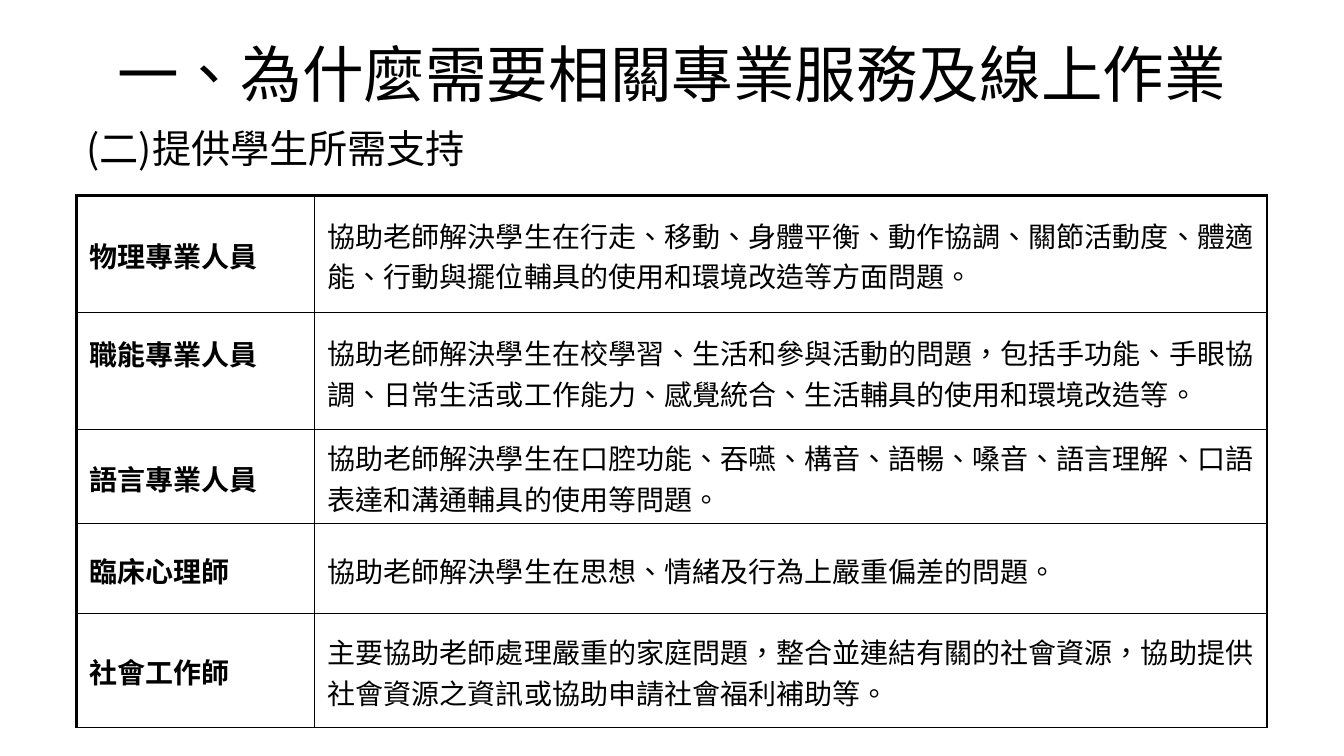
"""Build a slide on the support that related professionals give to students."""
from lxml.etree import SubElement
from pptx import Presentation
from pptx.dml.color import RGBColor
from pptx.enum.lang import MSO_LANGUAGE_ID
from pptx.enum.text import MSO_ANCHOR, MSO_AUTO_SIZE, PP_ALIGN
from pptx.oxml.ns import qn
from pptx.util import Cm, Pt

TITLE = "一、為什麼需要相關專業服務及線上作業"
SUBTITLE = "(二)提供學生所需支持"
SERVICES = [
    ("物理專業人員", "協助老師解決學生在行走、移動、身體平衡、動作協調、關節活動度、體適能、行動與擺位輔具的使用和環境改造等方面問題。"),
    ("職能專業人員", "協助老師解決學生在校學習、生活和參與活動的問題，包括手功能、手眼協調、日常生活或工作能力、感覺統合、生活輔具的使用和環境改造等。"),
    ("語言專業人員", "協助老師解決學生在口腔功能、吞嚥、構音、語暢、嗓音、語言理解、口語表達和溝通輔具的使用等問題。"),
    ("臨床心理師", "協助老師解決學生在思想、情緒及行為上嚴重偏差的問題。"),
    ("社會工作師", "主要協助老師處理嚴重的家庭問題，整合並連結有關的社會資源，協助提供社會資源之資訊或協助申請社會福利補助等。"),
]
COLUMN_WIDTHS = [6, 24]
ROW_HEIGHTS = [2.95, 2.95, 2.37, 2.26, 2.87]
RAISED_LABEL = "職能專業人員"
FONT = "Noto Sans CJK SC"
INK = "000000"
THIN, THICK = 1, 2.25


def color(value):
    return RGBColor.from_string(value)


def write(frame, text, size, bold=False, align=PP_ALIGN.LEFT):
    frame.word_wrap = True
    para = frame.paragraphs[0]
    para.alignment = align
    span = para.add_run()
    span.text = text
    span.font.size = Pt(size)
    span.font.bold = bold
    span.font.color.rgb = color(INK)
    span.font.name = FONT
    span.font.language_id = MSO_LANGUAGE_ID.TRADITIONAL_CHINESE
    SubElement(span.font._element, qn("a:ea"), typeface=FONT)


def draw_borders(cell, widths):
    properties = cell._tc.get_or_add_tcPr()
    for side, width in zip("LRTB", widths):
        line = SubElement(properties, qn(f"a:ln{side}"), w=str(Pt(width)))
        fill = SubElement(line, qn("a:solidFill"))
        SubElement(fill, qn("a:srgbClr"), val=INK)


def add_headings(page):
    title = page.shapes.title
    title.left, title.top, title.width, title.height = Cm(1.7), Cm(0.76), Cm(30.48), Cm(2.16)
    title.text_frame.auto_size = MSO_AUTO_SIZE.NONE
    title.text_frame.vertical_anchor = MSO_ANCHOR.MIDDLE
    write(title.text_frame, TITLE, 44, align=PP_ALIGN.CENTER)
    box = page.shapes.add_textbox(Cm(1.93), Cm(2.95), Cm(30.48), Cm(1.57))
    box.text_frame.vertical_anchor = MSO_ANCHOR.MIDDLE
    write(box.text_frame, SUBTITLE, 28)


def add_services(page):
    table = page.shapes.add_table(
        len(SERVICES), len(COLUMN_WIDTHS), Cm(1.93), Cm(4.93),
        Cm(sum(COLUMN_WIDTHS)), Cm(sum(ROW_HEIGHTS))).table
    table.first_row = table.horz_banding = False
    for column, width in zip(table.columns, COLUMN_WIDTHS):
        column.width = Cm(width)
    for row_index, (row, texts) in enumerate(zip(table.rows, SERVICES)):
        row.height = Cm(ROW_HEIGHTS[row_index])
        for column_index, (cell, text) in enumerate(zip(row.cells, texts)):
            is_label = column_index == 0
            cell.vertical_anchor = MSO_ANCHOR.MIDDLE
            cell.margin_left = cell.margin_right = Cm(0.33)
            cell.margin_top = Cm(0.19)
            cell.margin_bottom = Cm(1.1 if text == RAISED_LABEL else 0.13)
            draw_borders(cell, (
                THICK if is_label else THIN,
                THIN if is_label else THICK,
                THICK if row_index == 0 else THIN,
                THIN))
            cell.fill.background()
            write(cell.text_frame, text, 20, bold=is_label)


def main():
    deck = Presentation()
    deck.slide_width, deck.slide_height = Cm(33.87), Cm(19.05)
    page = deck.slides.add_slide(deck.slide_layouts[5])
    add_headings(page)
    add_services(page)
    deck.save("out.pptx")


if __name__ == "__main__":
    main()
